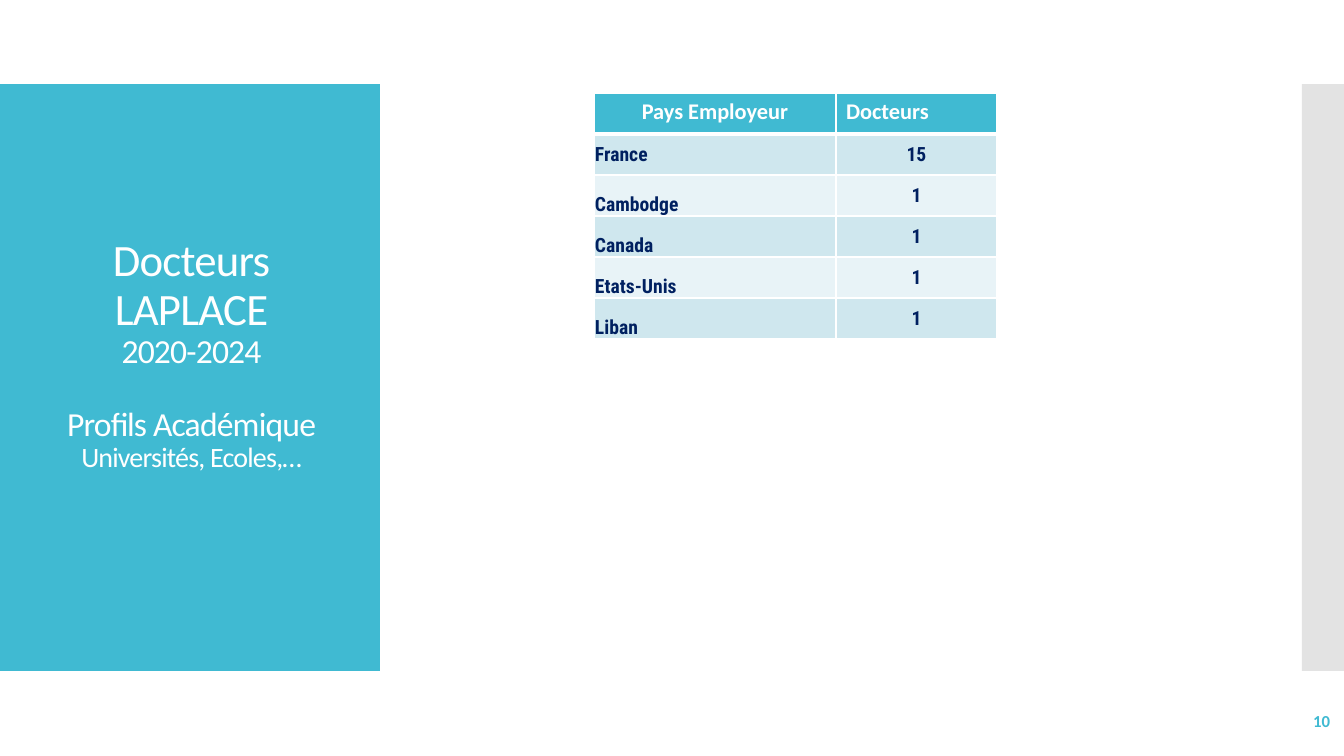
from lxml import etree
from pptx import Presentation
from pptx.dml.color import RGBColor
from pptx.enum.shapes import MSO_SHAPE
from pptx.enum.text import MSO_ANCHOR, PP_ALIGN
from pptx.oxml.ns import qn
from pptx.util import Pt

RECT = MSO_SHAPE.RECTANGLE
LEFT, MID, RIGHT = PP_ALIGN.LEFT, PP_ALIGN.CENTER, PP_ALIGN.RIGHT
TOP, CENTER, BOTTOM = MSO_ANCHOR.TOP, MSO_ANCHOR.MIDDLE, MSO_ANCHOR.BOTTOM

TEAL = RGBColor(0x40, 0xBA, 0xD2)
GREY = RGBColor(0xC8, 0xC8, 0xC8)
WHITE = RGBColor(0xFF, 0xFF, 0xFF)
NAVY = RGBColor(0x00, 0x20, 0x60)
BANDS = RGBColor(0xCF, 0xE7, 0xEE), RGBColor(0xE8, 0xF3, 0xF7)

SANS, NARROW = "Calibri", "Roboto Condensed"

# text, size, space before (points)
TITLE = [
    ("Docteurs", 32, 0),
    ("LAPLACE", 32, 0),
    ("2020-2024", 24, 0),
    ("Profils Académique", 24, 26),
    ("Universités, Ecoles,…", 20, 0),
]
HEAD = "Pays Employeur", "Docteurs"
ROWS = [("France", 15), ("Cambodge", 1), ("Canada", 1),
        ("Etats-Unis", 1), ("Liban", 1)]


def px(n):
    return round(n * 914400 / 100.8)


def style(para, size, color, font=SANS, bold=False, align=LEFT):
    para.alignment = align
    for run in para.runs:
        run.font.size = Pt(size)
        run.font.name = font
        run.font.bold = bold
        run.font.color.rgb = color


def panel(slide, x, y, w, h, color, alpha=100):
    shape = slide.shapes.add_shape(RECT, px(x), px(y), px(w), px(h))
    shape.shadow.inherit = False
    shape.line.fill.background()
    shape.fill.solid()
    shape.fill.fore_color.rgb = color
    if alpha < 100:
        tone = shape.fill._xPr.find(".//" + qn("a:srgbClr"))
        etree.SubElement(tone, qn("a:alpha"), val=str(alpha * 1000))


def textbox(slide, x, y, w, h):
    frame = slide.shapes.add_textbox(px(x), px(y), px(w), px(h)).text_frame
    frame.word_wrap = True
    frame.vertical_anchor = CENTER
    return frame


def title(slide):
    frame = textbox(slide, 9, 124, 365, 507)
    frame.margin_bottom = px(48)
    frame.text = "\n".join(text for text, _, _ in TITLE)
    for para, (_, size, gap) in zip(frame.paragraphs, TITLE):
        style(para, size, WHITE, align=MID)
        para.line_spacing = 0.9
        para.space_before = Pt(gap)
        for run in para.runs:
            run.font._element.set("spc", "-60")


def border(cell, base):
    """Draw white cell edges, the lower one base points wide."""
    props = cell._tc.get_or_add_tcPr()
    edges = ("lnL", 1), ("lnR", 1), ("lnT", 1), ("lnB", base)
    for spot, (tag, width) in enumerate(edges):
        line = etree.Element(qn("a:" + tag), w=str(Pt(width)))
        fill = etree.SubElement(line, qn("a:solidFill"))
        etree.SubElement(fill, qn("a:srgbClr"), val=str(WHITE))
        props.insert(spot, line)


def paint(cell, text, color, anchor, base=1):
    cell.text = str(text)
    cell.vertical_anchor = anchor
    cell.fill.solid()
    cell.fill.fore_color.rgb = color
    border(cell, base)
    return cell.text_frame.paragraphs[0]


def table(slide):
    count = len(ROWS) + 1
    grid = slide.shapes.add_table(count, 2, px(594), px(93),
                                  px(403), px(41 * count)).table
    for col, width in zip(grid.columns, (242, 161)):
        col.width = px(width)
    for c, (text, align) in enumerate(zip(HEAD, (MID, LEFT))):
        para = paint(grid.cell(0, c), text, TEAL, TOP, 3)
        style(para, 16, WHITE, bold=True, align=align)
    for r, row in enumerate(ROWS):
        anchors = (BOTTOM if r else CENTER), CENTER
        for c, (text, align) in enumerate(zip(row, (LEFT, MID))):
            cell = grid.cell(r + 1, c)
            cell.margin_left = cell.margin_right = cell.margin_top = px(1)
            cell.margin_bottom = 0
            para = paint(cell, text, BANDS[r % 2], anchors[c])
            style(para, 14, NAVY, NARROW, True, align)


def number(slide):
    frame = textbox(slide, 1172, 701, 168, 40)
    frame.text = "10"
    style(frame.paragraphs[0], 12, TEAL, bold=True, align=RIGHT)


def main():
    deck = Presentation()
    deck.slide_width, deck.slide_height = px(1344), px(756)
    slide = deck.slides.add_slide(deck.slide_layouts[6])
    panel(slide, 0, 84, 380, 587, TEAL)
    panel(slide, 1302, 84, 42, 587, GREY, 50)
    title(slide)
    table(slide)
    number(slide)
    deck.save("out.pptx")


if __name__ == "__main__":
    main()
